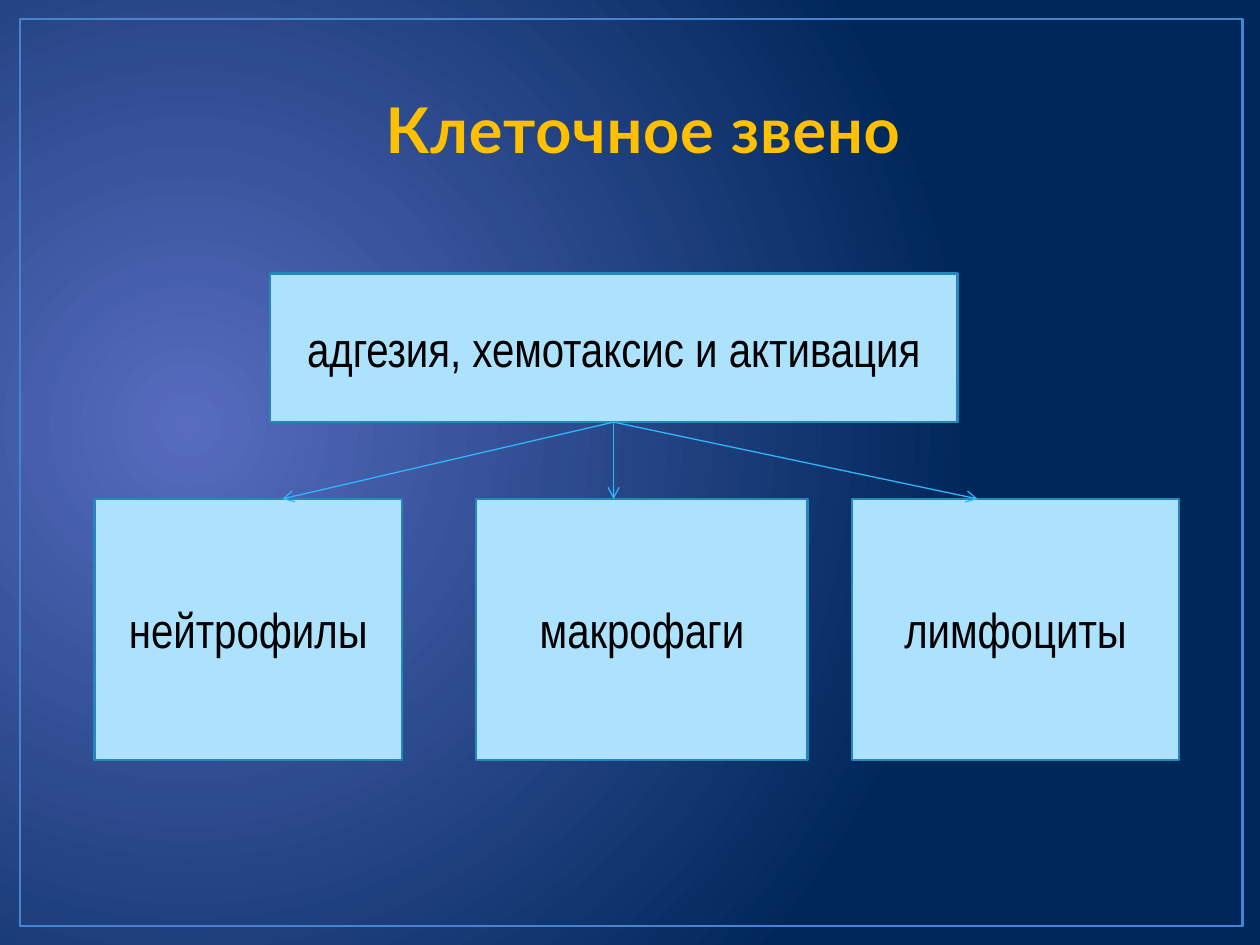
from dataclasses import dataclass

from lxml.etree import SubElement
from pptx import Presentation
from pptx.dml.color import RGBColor
from pptx.enum.shapes import MSO_CONNECTOR as Connector, MSO_SHAPE as Preset
from pptx.enum.text import MSO_ANCHOR as Anchor, MSO_AUTO_SIZE as AutoSize, PP_ALIGN as Align
from pptx.oxml import parse_xml
from pptx.oxml.ns import nsdecls, qn
from pptx.util import Inches, Pt

# The slide is a grid of 100 columns and 75 rows
CELL = Inches(0.1)
COLUMNS, ROWS = 100, 75
BOTTOM_SIDE = 2
CELL_ROW, CELL_HEIGHT = 39.6, 20.7


@dataclass
class Box:
    column: float
    row: float
    width: float
    height: float
    text: str = ""


@dataclass
class CellType:
    text: str
    column: float
    width: float
    arrow_column: float


FRAME = Box(1.6, 1.5, 97, 72)
TITLE = Box(5.3, 3.6, 91.5, 10.1, "Клеточное звено")
PROCESS = Box(21.4, 21.7, 54.6, 11.8, "адгезия, хемотаксис и активация")
CELL_TYPES = [
    CellType("нейтрофилы", 7.5, 24.4, 22.4),
    CellType("макрофаги", 37.8, 26.3, 48.7),
    CellType("лимфоциты", 67.6, 26, 77.6),
]


def grid(count: float) -> int:
    return round(count * CELL)


def rgb(value: str) -> RGBColor:
    return RGBColor.from_string(value)


def write(shape, text: str, *, font: str, size: float, color: str,
          bold: bool = False, anchor=Anchor.MIDDLE):
    """Put one centred line of text in a shape and return its run."""
    frame = shape.text_frame
    frame.word_wrap = True
    frame.auto_size = AutoSize.NONE
    frame.vertical_anchor = anchor
    paragraph = frame.paragraphs[0]
    paragraph.alignment = Align.CENTER
    run = paragraph.add_run()
    run.text = text
    run.font.name, run.font.size, run.font.bold = font, Pt(size), bold
    run.font.color.rgb = rgb(color)
    return run


def paint_background(slide, center: str, edge: str) -> None:
    fill = slide.background.fill
    fill.gradient()
    for stop, color, position in zip(fill.gradient_stops, (center, edge), (0, 1)):
        stop.color.rgb = rgb(color)
        stop.position = position
    gradient = next(slide.element.iter(qn("a:gradFill")))
    gradient.remove(gradient.find(qn("a:lin")))
    path = SubElement(gradient, qn("a:path"), {"path": "circle"})
    SubElement(path, qn("a:fillToRect"),
               {"l": "15000", "t": "50000", "r": "85000", "b": "60000"})


def draw_box(slide, box: Box, line: str, line_width: float, fill: str = ""):
    shape = slide.shapes.add_shape(
        Preset.RECTANGLE, *map(grid, (box.column, box.row, box.width, box.height)))
    shape.shadow.inherit = False
    shape.line.color.rgb = rgb(line)
    shape.line.width = Pt(line_width)
    if fill:
        shape.fill.solid()
        shape.fill.fore_color.rgb = rgb(fill)
    else:
        shape.fill.background()
    if box.text:
        write(shape, box.text, font="Arial Narrow", size=28, color="000000")
    return shape


def draw_labelled_box(slide, box: Box):
    return draw_box(slide, box, "2487BB", 1.25, "ADE2FE")


def draw_arrow(slide, source, column: float, row: float) -> None:
    arrow = slide.shapes.add_connector(
        Connector.STRAIGHT, 0, 0, grid(column), grid(row))
    arrow.begin_connect(source, BOTTOM_SIDE)
    arrow.line.color.rgb = rgb("31B6FD")
    arrow.line.width = Pt(0.75)
    SubElement(arrow.line._get_or_add_ln(), qn("a:tailEnd"), {"type": "arrow"})
    SubElement(arrow.element.spPr, qn("a:effectLst"))


def write_title(slide) -> None:
    title = slide.shapes.title
    title.left, title.top = grid(TITLE.column), grid(TITLE.row)
    title.width, title.height = grid(TITLE.width), grid(TITLE.height)
    run = write(title, TITLE.text, font="Lato", size=36, color="FFC000",
                bold=True, anchor=Anchor.BOTTOM)
    # Letter spacing and a thin outline
    properties = run.font._element
    properties.set("spc", "50")
    properties.insert(0, parse_xml(
        f'<a:ln {nsdecls("a")} w="{Pt(1.05)}"><a:solidFill>'
        '<a:srgbClr val="016296"/></a:solidFill></a:ln>'))


def main() -> None:
    deck = Presentation()
    deck.slide_width, deck.slide_height = grid(COLUMNS), grid(ROWS)
    slide = deck.slides.add_slide(deck.slide_layouts.get_by_name("Title Only"))

    # Background, frame and title
    paint_background(slide, "576CBF", "00275A")
    draw_box(slide, FRAME, "4584D3", 1.5)
    write_title(slide)

    # Process and the cell types it leads to
    process = draw_labelled_box(slide, PROCESS)
    for cell in CELL_TYPES:
        draw_labelled_box(
            slide, Box(cell.column, CELL_ROW, cell.width, CELL_HEIGHT, cell.text))
    for cell in CELL_TYPES:
        draw_arrow(slide, process, cell.arrow_column, CELL_ROW)

    deck.save("out.pptx")


if __name__ == "__main__":
    main()
